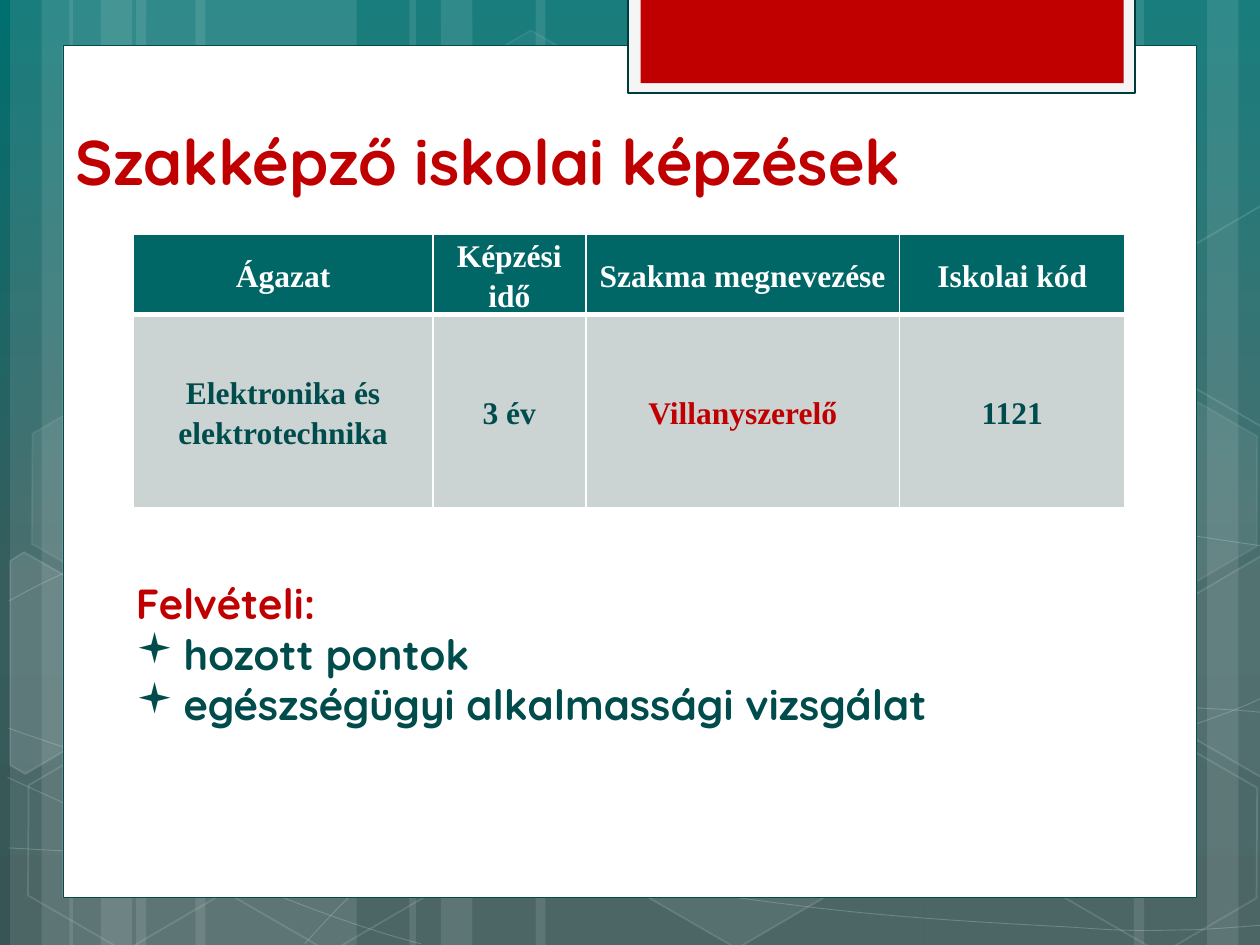
from copy import deepcopy
from dataclasses import dataclass
from math import cos, radians, sin

from pptx import Presentation, util as u
from pptx.dml.color import RGBColor
from pptx.enum import shapes as kinds, text as txt
from pptx.oxml import parse_xml
from pptx.oxml.ns import nsdecls

UNIT = u.Inches(0.1)
TILT = 30


@dataclass(frozen=True)
class Theme:
    """Colours, fonts and type sizes of the slide."""
    white: str = "FFFFFF"
    red: str = "C00000"
    ink: str = "004C4C"
    header: str = "006666"
    cell: str = "CCD3D3"
    tab: str = "F5F5F5"
    tab_edge: str = "003B3C"
    backdrop: tuple = ((0, "006F6F"), (0.62, "375D5D"), (1, "385555"))
    display: str = "Quicksand"
    serif: str = "Times New Roman"
    title_size: int = 36
    body_size: int = 24
    table_size: int = 18


THEME = Theme()


@dataclass(frozen=True)
class Box:
    """An area on a grid of 100 columns and 75 rows."""
    left: float
    top: float
    width: float
    height: float

    def inner(self, left, top, width, height):
        """Return a box placed from this box's corner."""
        return Box(self.left + left, self.top + top, width, height)

    def point(self, x, y):
        """Return slide coordinates of a grid point."""
        return round((self.left + x) * UNIT), round((self.top + y) * UNIT)

    def frame(self):
        """Return left, top, width and height as lengths."""
        return [u.Emu(round(v * UNIT)) for v in (self.left, self.top, self.width, self.height)]


STRIPES = [(10.8, 17.5), (0.8, 5), (3.3, 8.3), (15.5, 17.5), (5.5, 5), (8, 8.3),
           (73.3, 17.5), (95.8, 5), (90, 8.3), (42.5, 30.8), (32.5, 5), (35, 8.3)]
CURVES = [
    [(0.7, 67.3), (6.1, 67.6), (11.5, 67.9), (19, 67.8), (26.5, 67.7), (35.8, 67.5), (45.8, 66.5),
     (55.8, 65.5), (70, 63.6), (79.2, 61.7), (88.3, 59.8), (97.7, 56.8), (100.7, 55.1)],
    [(0.7, 47.7), (3.6, 46.1), (6.5, 44.6), (12.1, 43.1), (17.8, 41.6), (25.9, 39.4), (34.7, 38.7),
     (43.6, 38), (54.4, 37.9), (65.4, 38.7), (76.4, 39.5), (94.7, 42.6), (100.7, 43.4)],
    [(0.6, 61.7), (12.7, 67.2), (24.7, 72.7), (33.4, 74.9)],
    [(0.7, 57.8), (3.8, 58.9), (7, 60), (12.8, 61.6), (18.6, 63.1), (27.3, 65.6), (35.7, 67.3),
     (44, 69), (54.5, 70.8), (62.8, 71.8), (71.1, 72.9), (80, 73.3), (85.3, 73.6),
     (90.5, 74), (91.9, 73.8), (94.5, 73.8), (97.1, 73.7), (98.9, 73.5), (100.7, 73.4)],
    [(24.2, 74.9), (26, 72.9), (27.8, 70.9), (30.2, 69.1), (32.6, 67.3), (36, 65.3), (38.8, 63.9),
     (41.6, 62.5), (43.3, 61.9), (47, 60.9), (50.6, 59.9), (57.3, 58.5), (60.8, 57.8),
     (64.4, 57.1), (64.9, 57.1), (68, 56.9), (71.1, 56.6), (76, 56.3), (79.4, 56.2),
     (82.9, 56.1), (88.6, 56.2), (88.6, 56.2), (90.8, 56.2), (93, 56.2), (95.3, 56.2),
     (97.1, 56.3), (98.8, 56.4), (99.7, 56.5), (100.6, 56.6), (100.3, 56.5), (100.6, 56.6)],
]
HEXAGONS = [(33.4, 3.6, 4, 8), (49.7, 58.9, 6, 12), (1.1, 59.1, 0, 12), (1.4, 31.2, 7, 8),
            (17.4, 59.2, 0, 12), (75.3, 45.3, 10, 12), (83.4, 59.3, 0, 12), (83.4, 31.4, 7, 8)]
CUT_HEXAGONS = [
    ([(0.8, 44.5), (1.9, 43.8), (9.6, 48.2), (9.5, 57), (2, 61.4), (0.8, 60.7)], (3.6, 53.5), 10),
    ([(92.6, 48.5), (100.1, 44.1), (100.9, 44.6), (100.9, 61.3), (100.2, 61.7), (92.6, 57.3)],
     (98.5, 52), 4),
    ([(92.6, 20.7), (100.1, 16.3), (101, 16.8), (100.9, 33.5), (100.2, 33.9), (92.6, 29.5)],
     (98.5, 24.1), 0),
]
COLUMNS = [("Ágazat", "Elektronika és elektrotechnika", THEME.ink, 23.75),
           ("Képzési idő", "3 év", THEME.ink, 12.15),
           ("Szakma megnevezése", "Villanyszerelő", THEME.red, 24.9),
           ("Iskolai kód", "1121", THEME.ink, 17.9)]
REQUIREMENTS = ["hozott pontok", "egészségügyi alkalmassági vizsgálat"]


def paint(shape, fill=None, fill_alpha=100, line=None, width=1, line_alpha=100):
    """Give a shape its fill and line, with opacity in percent."""
    shape.shadow.inherit = False
    for part, colour in ((shape.fill, fill), (shape.line.fill, line)):
        if colour:
            part.solid()
            part.fore_color.rgb = RGBColor.from_string(colour)
        else:
            part.background()
    if line:
        shape.line.width = u.Pt(width)
    for query, alpha in (("./p:spPr/a:solidFill/a:srgbClr", fill_alpha),
                         ("./p:spPr/a:ln/a:solidFill/a:srgbClr", line_alpha)):
        for colour in shape.element.xpath(query):
            if alpha < 100:
                colour.append(parse_xml(f'<a:alpha {nsdecls("a")} val="{alpha * 1000}"/>'))


def write(paragraph, words, font, size, colour):
    """Add one bold run to a paragraph."""
    run = paragraph.add_run()
    run.text = words
    run.font.name, run.font.size, run.font.bold = font, u.Pt(size), True
    run.font.color.rgb = RGBColor.from_string(colour)


def block(parent, box, **look):
    """Place a painted rectangle."""
    paint(parent.shapes.add_shape(kinds.MSO_SHAPE.RECTANGLE, *box.frame()), **look)


def outline(parent, box, points, close):
    """Place a freeform through grid points."""
    start, *rest = [box.point(x, y) for x, y in points]
    builder = parent.shapes.build_freeform(*start, scale=1.0)
    builder.add_line_segments(rest, close=close)
    return builder.convert_to_shape()


def curve(parent, box, knots):
    """Place a chain of cubic curves through its knots."""
    shape = outline(parent, box, knots, False)
    lines = shape.element.xpath(".//a:lnTo")
    for i in range(0, len(lines), 3):
        cubic = parse_xml(f'<a:cubicBezTo {nsdecls("a")}/>')
        lines[i].addprevious(cubic)
        for line in lines[i:i + 3]:
            cubic.append(line[0])
            line.getparent().remove(line)
    return shape


def untilt(points, centre):
    """Turn points back by the tilt around a centre."""
    c, s = cos(radians(TILT)), sin(radians(TILT))
    cx, cy = centre
    return [(cx + (x - cx) * c + (y - cy) * s, cy - (x - cx) * s + (y - cy) * c)
            for x, y in points]


def backdrop(slide, box):
    """Draw the gradient, stripes, curves and hexagons."""
    fill = slide.background.fill
    fill.gradient()
    fill.gradient_angle = 270
    stop_list = slide.element.xpath(".//a:gsLst")[0]
    stop_list.insert(1, deepcopy(stop_list[0]))
    for stop, (position, colour) in zip(fill.gradient_stops, THEME.backdrop):
        stop.position = position
        stop.color.rgb = RGBColor.from_string(colour)
    pattern = slide.shapes.add_group_shape()
    for left, width in STRIPES:
        block(pattern, box.inner(left, 0, width, box.height), fill=THEME.white, fill_alpha=10)
    for knots in CURVES:
        paint(curve(pattern, box, knots), line=THEME.white, width=0.5, line_alpha=20)
    for left, top, alpha, line_alpha in HEXAGONS:
        hexagon = pattern.shapes.add_shape(kinds.MSO_SHAPE.HEXAGON,
                                           *box.inner(left, top, 17.5, 15.2).frame())
        hexagon.adjustments[0] = 0.285
        hexagon.rotation = TILT
        paint(hexagon, THEME.white if alpha else None, alpha, THEME.white, 1, line_alpha)
    for points, centre, alpha in CUT_HEXAGONS:
        piece = outline(pattern, box, untilt(points, centre), True)
        piece.rotation = TILT
        paint(piece, THEME.white if alpha else None, alpha, THEME.white, 1, 12)


def card(slide, box):
    """Draw the white card and the red tab hanging over it."""
    block(slide, box, fill=THEME.white, line=THEME.ink, width=0.5)
    block(slide, box.inner(44.85, -3.8, 40.25, 7.6),
          fill=THEME.tab, line=THEME.tab_edge, width=1.25)
    block(slide, box.inner(45.84, -3.8, 38.35, 6.8), fill=THEME.red)


def heading(slide, box):
    """Place the title in front of the card."""
    title = slide.shapes.title
    title.left, title.top, title.width, title.height = box.frame()
    slide.shapes.element.append(title.element)
    frame = title.text_frame
    frame.auto_size, frame.word_wrap = txt.MSO_AUTO_SIZE.NONE, True
    frame.vertical_anchor = txt.MSO_ANCHOR.BOTTOM
    frame.paragraphs[0].alignment = txt.PP_ALIGN.LEFT
    write(frame.paragraphs[0], "Szakképző iskolai képzések",
          THEME.display, THEME.title_size, THEME.red)


def fill_cell(cell, words, colour, ground, edges):
    """Write one table cell and draw its borders, in points by side."""
    cell.margin_left = cell.margin_right = u.Inches(0.07)
    cell.margin_top = cell.margin_bottom = 0
    cell.vertical_anchor = txt.MSO_ANCHOR.MIDDLE
    cell.fill.solid()
    cell.fill.fore_color.rgb = RGBColor.from_string(ground)
    paragraph = cell.text_frame.paragraphs[0]
    paragraph.alignment, paragraph.line_spacing = txt.PP_ALIGN.CENTER, 1.15
    write(paragraph, words, THEME.serif, THEME.table_size, colour)
    properties = cell._tc.get_or_add_tcPr()
    for order, (side, width) in enumerate(zip("LRTB", edges)):
        properties.insert(order, parse_xml(
            f'<a:ln{side} {nsdecls("a")} w="{u.Pt(width)}"><a:solidFill>'
            f'<a:srgbClr val="{THEME.white}"/></a:solidFill></a:ln{side}>'))


def course_table(slide, box):
    """Place the table of courses."""
    table = slide.shapes.add_table(2, len(COLUMNS), *box.frame()).table
    table.rows[0].height, table.rows[1].height = round(5.9 * UNIT), round(15.3 * UNIT)
    for i, (label, value, colour, width) in enumerate(COLUMNS):
        table.columns[i].width = round(width * UNIT)
        fill_cell(table.cell(0, i), label, THEME.white, THEME.header, (1, 1, 1, 3))
        fill_cell(table.cell(1, i), value, colour, THEME.cell, (1, 1, 3, 1))


def admission(slide, box):
    """Place the admission heading and its bullets."""
    frame = slide.shapes.add_textbox(*box.frame()).text_frame
    frame.word_wrap = True
    write(frame.paragraphs[0], "Felvételi:", THEME.display, THEME.body_size, THEME.red)
    for requirement in REQUIREMENTS:
        paragraph = frame.add_paragraph()
        write(paragraph, requirement, THEME.display, THEME.body_size, THEME.ink)
        properties = paragraph._p.get_or_add_pPr()
        properties.set("marL", str(u.Inches(0.38)))
        properties.set("indent", str(-u.Inches(0.38)))
        properties.append(parse_xml(f'<a:buFont {nsdecls("a")} typeface="Wingdings"/>'))
        properties.append(parse_xml(f'<a:buChar {nsdecls("a")} char="▪"/>'))


def main():
    """Build and save the slide."""
    deck = Presentation()
    deck.slide_width, deck.slide_height = 100 * UNIT, 75 * UNIT
    slide = deck.slides.add_slide(deck.slide_layouts[5])
    page = Box(0, 0, 100, 75)
    panel = page.inner(5, 3.6, 90, 67.65)
    backdrop(slide, page)
    card(slide, panel)
    heading(slide, panel.inner(0, -0.6, 90, 13.2))
    course_table(slide, panel.inner(5.6, 15, 78.7, 21.2))
    admission(slide, panel.inner(4.8, 41.75, 83.2, 13.1))
    deck.save("out.pptx")


if __name__ == "__main__":
    main()
